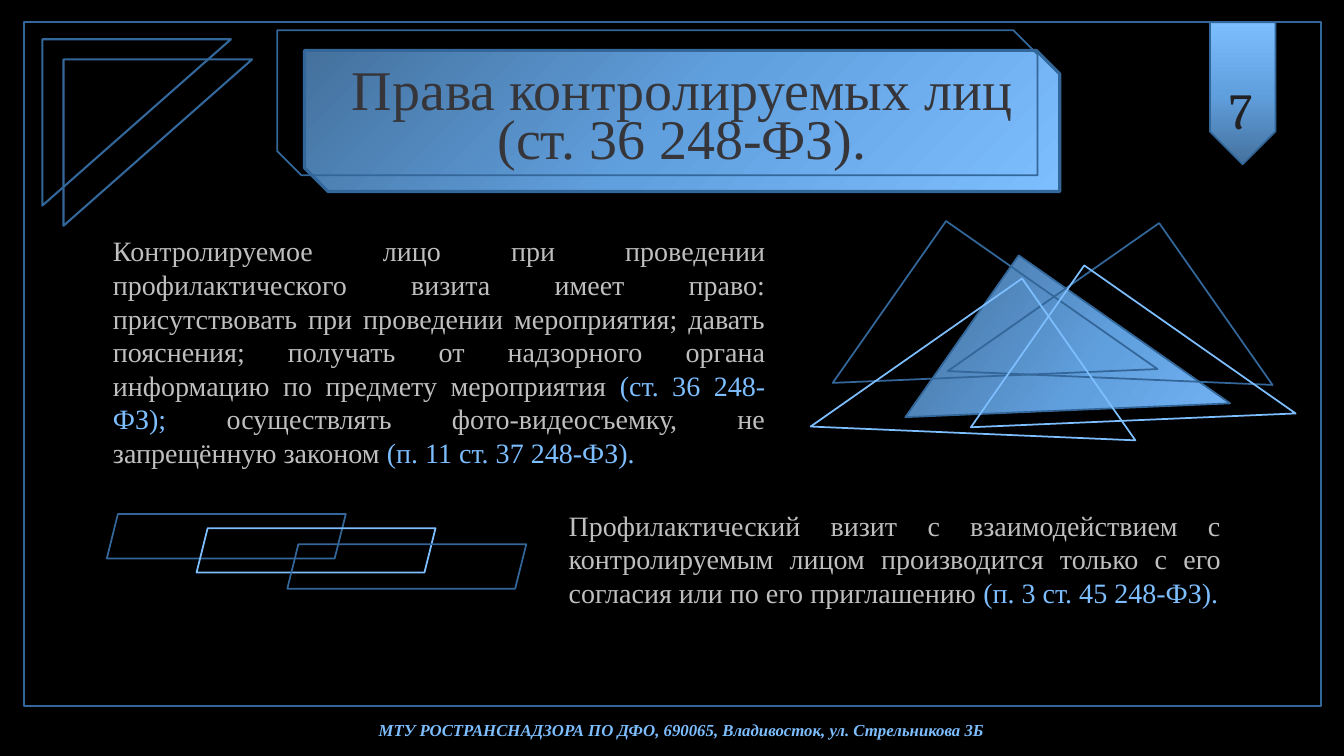
from lxml.etree import SubElement
from pptx import Presentation
from pptx.dml.color import RGBColor
from pptx.enum.shapes import MSO_SHAPE as Shape
from pptx.enum.text import MSO_ANCHOR as Anchor, MSO_AUTO_SIZE as AutoSize, PP_ALIGN as Align
from pptx.oxml.ns import qn
from pptx.util import Pt

EMU_PER_PX = 9144
BLACK = RGBColor(0x00, 0x00, 0x00)
NAVY = RGBColor(0x33, 0x66, 0x99)
SKY = RGBColor(0x7D, 0xBE, 0xFF)
AZURE = RGBColor(0x61, 0xA0, 0xDF)
STEEL = RGBColor(0x44, 0x71, 0x9D)
SILVER = RGBColor(0xBF, 0xBF, 0xBF)
GRAPHITE = RGBColor(0x36, 0x36, 0x3A)
INK = RGBColor(0x21, 0x21, 0x23)


def px(value):
    return value * EMU_PER_PX


def write_text(target, runs, size=20, font="Times New Roman", bold=False, italic=False,
               align=Align.LEFT, spacing=1.0, anchor=Anchor.TOP, wrap=True):
    frame = target.text_frame
    frame.word_wrap = wrap
    frame.auto_size = AutoSize.NONE
    frame.vertical_anchor = anchor
    paragraph = frame.paragraphs[0]
    paragraph.alignment = align
    paragraph.line_spacing = spacing
    paragraph.space_before = Pt(0)
    for text, color in runs:
        run = paragraph.add_run()
        run.text = text
        run.font.name = font
        run.font.size = Pt(size)
        run.font.bold = bold
        run.font.italic = italic
        run.font.color.rgb = color
    return paragraph


class SlideBuilder:
    gradient_stops = ((0, STEEL), (50, AZURE), (100, SKY))

    def __init__(self, presentation, layout_index):
        self.slide = presentation.slides.add_slide(presentation.slide_layouts[layout_index])
        fill = self.slide.background.fill
        fill.solid()
        fill.fore_color.rgb = BLACK

    def shape(self, kind, box, line=NAVY, width=1.25, rotation=0, flip=False, gradient=None):
        shape = self.slide.shapes.add_shape(kind, *map(px, box))
        shape.shadow.inherit = False
        shape.rotation = rotation
        shape.line.color.rgb = line
        shape.line.width = Pt(width)
        shape.fill.background()
        if flip:
            shape._element.spPr.get_or_add_xfrm().set("flipV", "1")
        if gradient is not None:
            self.gradient(shape, gradient)
        return shape

    def gradient(self, shape, angle):
        properties = shape._element.spPr
        empty_fill = properties.find(qn("a:noFill"))
        fill = SubElement(properties, qn("a:gradFill"), rotWithShape="1")
        properties.replace(empty_fill, fill)
        stops = SubElement(fill, qn("a:gsLst"))
        for position, color in self.gradient_stops:
            stop = SubElement(stops, qn("a:gs"), pos=str(position * 1000))
            SubElement(stop, qn("a:srgbClr"), val=str(color))
        SubElement(fill, qn("a:lin"), ang=str(angle * 60000), scaled="0")

    def text(self, box, runs, **style):
        write_text(self.slide.shapes.add_textbox(*map(px, box)), runs, **style)

    def placeholder(self, index, box, runs, **style):
        holder = self.slide.placeholders[index]
        holder.left, holder.top, holder.width, holder.height = map(px, box)
        self.slide.shapes._spTree.append(holder._element)
        return write_text(holder, runs, **style)

    def body(self, index, box, runs):
        paragraph = self.placeholder(index, box, runs, align=Align.JUSTIFY)
        properties = paragraph._p.get_or_add_pPr()
        properties.set("marL", "0")
        properties.set("indent", "0")
        SubElement(properties, qn("a:buNone"))


def main():
    presentation = Presentation()
    presentation.slide_width = px(1333)
    presentation.slide_height = px(750)
    builder = SlideBuilder(presentation, 3)

    builder.shape(Shape.RIGHT_TRIANGLE, (931, 309, 256, 196), rotation=35, flip=True, gradient=0)
    builder.shape(Shape.RECTANGLE, (24, 22, 1286, 678), width=1.5)
    builder.text((223, 713, 906, 26),
                 [("МТУ РОСТРАНСНАДЗОРА ПО ДФО, 690065, Владивосток, ул. Стрельникова 3Б", SKY)],
                 size=12, bold=True, italic=True, align=Align.CENTER, spacing=0.8)
    for left, top in ((42, 39), (63, 59)):
        builder.shape(Shape.RIGHT_TRIANGLE, (left, top, 187, 165), width=1.5, flip=True)

    builder.shape(Shape.PENTAGON, (1162, 60, 141, 65), rotation=90, gradient=180)
    builder.text((1209, 74, 48, 71), [("7", INK)], size=36, font="Cambria", wrap=False)

    builder.shape(Shape.SNIP_2_DIAG_RECTANGLE, (302, 50, 749, 140), width=2.25, gradient=45)
    builder.placeholder(0, (302, 66, 749, 109),
                        [("Права контролируемых лиц (ст. 36 248-ФЗ).", GRAPHITE)],
                        size=40, align=Align.CENTER, spacing=Pt(35), anchor=Anchor.MIDDLE)
    builder.shape(Shape.SNIP_2_DIAG_RECTANGLE, (275, 30, 754, 144))

    builder.body(1, (102, 227, 667, 246), [
        ("Контролируемое лицо при проведении профилактического визита имеет право: "
         "присутствовать при проведении мероприятия; давать пояснения; получать от "
         "надзорного органа информацию по предмету мероприятия ", SILVER),
        ("(ст. 36 248-ФЗ);", SKY),
        (" осуществлять фото-видеосъемку, не запрещённую законом ", SILVER),
        ("(п. 11 ст. 37 248-ФЗ).", SKY),
    ])
    builder.body(2, (554, 499, 667, 111), [
        ("Профилактический визит с взаимодействием с контролируемым лицом "
         "производится только с его согласия или по его приглашению ", SILVER),
        ("(п. 3 ст. 45 248-ФЗ).", SKY),
    ])

    for left, top, color in ((106, 510, NAVY), (195, 524, SKY), (285, 540, NAVY)):
        builder.shape(Shape.PARALLELOGRAM, (left, top, 237, 44), line=color)

    for left, top, color, flip in ((973, 277, NAVY, False), (859, 275, NAVY, True),
                                   (837, 332, SKY, False), (996, 319, SKY, True)):
        builder.shape(Shape.RIGHT_TRIANGLE, (left, top, 256, 196), line=color,
                      rotation=35 if flip else 145, flip=flip)

    presentation.save("out.pptx")


if __name__ == "__main__":
    main()
